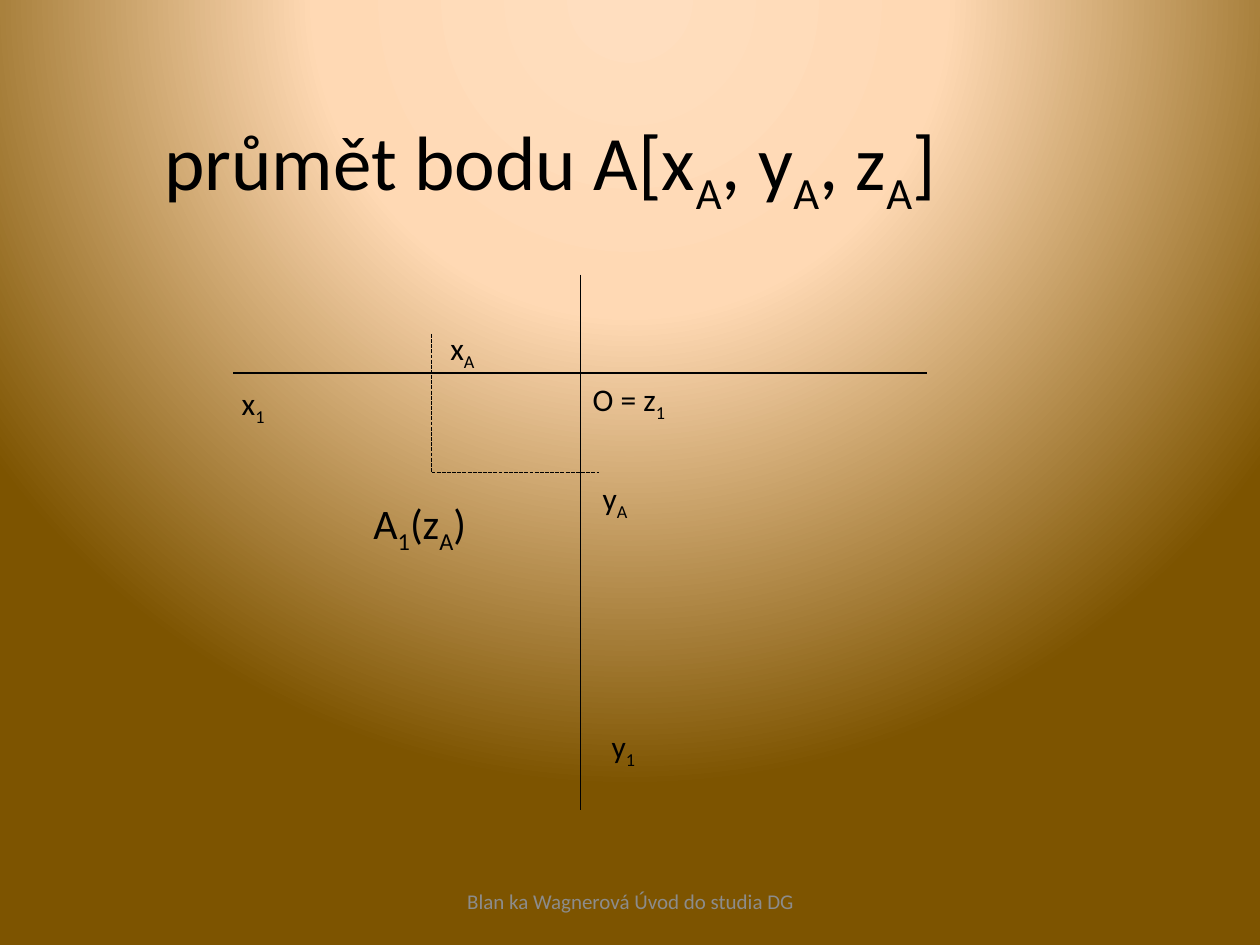
import pptx
import pptx.util
import pptx.dml.color
import pptx.enum.dml
import pptx.enum.shapes
import pptx.enum.text
import pptx.oxml
import pptx.oxml.ns
import pptx.oxml.xmlchemy
from pptx.util import Inches

FONT = "Calibri"
BLACK = "000000"
GREY = "8C8C8C"
STOPS = [(0, "FFDEBF"), (40, "FFD9B4"), (100, "7D5400")]


def color(value):
    return pptx.dml.color.RGBColor.from_string(value)


def write(tf, text, size=18, fill=BLACK, align="LEFT", anchor="TOP"):
    """Fill a text frame; parts between underscores become subscripts."""
    tf.word_wrap = True
    tf.vertical_anchor = getattr(pptx.enum.text.MSO_ANCHOR, anchor)
    p = tf.paragraphs[0]
    p.alignment = getattr(pptx.enum.text.PP_ALIGN, align)
    for i, part in enumerate(text.split("_")):
        if not part:
            continue
        r = p.add_run()
        r.text = part
        r.font.name = FONT
        r.font.size = pptx.util.Pt(size)
        r.font.color.rgb = color(fill)
        if i % 2:
            r.font._element.set("baseline", "-25000")


def add_label(s, text, left, top, width, height=0.4, **fmt):
    sp = s.shapes.add_textbox(*map(Inches, (left, top, width, height)))
    write(sp.text_frame, text, **fmt)


def add_line(s, x1, y1, x2, y2, dashed=False):
    sp = s.shapes.add_connector(pptx.enum.shapes.MSO_CONNECTOR.STRAIGHT,
                                *map(Inches, (x1, y1, x2, y2)))
    sp.line.color.rgb = color(BLACK)
    sp.line.width = pptx.util.Pt(0.75)
    if dashed:
        sp.line.dash_style = pptx.enum.dml.MSO_LINE.SQUARE_DOT
    sp._element.spPr.append(pptx.oxml.xmlchemy.OxmlElement("a:effectLst"))


def set_background(s):
    stops = "".join(f'<a:gs pos="{pos * 1000}"><a:srgbClr val="{c}"/></a:gs>'
                    for pos, c in STOPS)
    bg = pptx.oxml.parse_xml(
        f'<p:bg {pptx.oxml.ns.nsdecls("p", "a")}><p:bgPr>'
        f'<a:gradFill rotWithShape="1"><a:gsLst>{stops}</a:gsLst>'
        '<a:path path="circle"><a:fillToRect l="50000" t="-80000" '
        'r="50000" b="180000"/></a:path></a:gradFill><a:effectLst/>'
        '</p:bgPr></p:bg>')
    s._element.cSld.insert(0, bg)


def add_title(s, text, left, top, width, height):
    sp = s.shapes.title
    sp.left, sp.top, sp.width, sp.height = map(Inches, (left, top, width, height))
    write(sp.text_frame, text, size=44, align="CENTER", anchor="MIDDLE")


def add_projection(s, left, top, width, height):
    # Origin and the projected point
    ox, oy = left + width / 2, top + 0.78
    ax, ay = ox - 1.18, oy + 0.79

    # Axes
    add_line(s, left, oy, left + width, oy)
    add_line(s, ox, top, ox, top + height)
    add_label(s, "O = z_1_", ox, oy + 0.01, 1.02)
    add_label(s, "x_1_", left - 0.03, oy + 0.04, 0.71)
    add_label(s, "y_1_", ox + 0.15, top + height - 0.71, 0.71)

    # Coordinates of the point
    add_line(s, ax, oy - 0.31, ax, ay, dashed=True)
    add_line(s, ax, ay, ox + 0.15, ay, dashed=True)
    add_label(s, "A_1_(z_A_)", ax - 0.56, ay + 0.15, 1.42, 0.5, size=24)
    add_label(s, "x_A_", ax + 0.05, oy - 0.4, 0.45)
    add_label(s, "y_A_", ox + 0.08, ay, 0.94)


def main():
    prs = pptx.Presentation()
    prs.slide_width, prs.slide_height = Inches(10), Inches(7.5)
    s = prs.slides.add_slide(prs.slide_layouts[5])
    set_background(s)
    add_title(s, "průmět bodu A[x_A_, y_A_, z_A_]", 0.5, 0.3, 7.73, 2.03)
    # Footer
    add_label(s, "Blan ka Wagnerová Úvod do studia DG", 3.42, 6.95, 3.17,
              size=12, fill=GREY, align="CENTER", anchor="MIDDLE")
    add_projection(s, 1.85, 2.18, 5.51, 4.25)
    prs.save("out.pptx")


if __name__ == "__main__":
    main()
